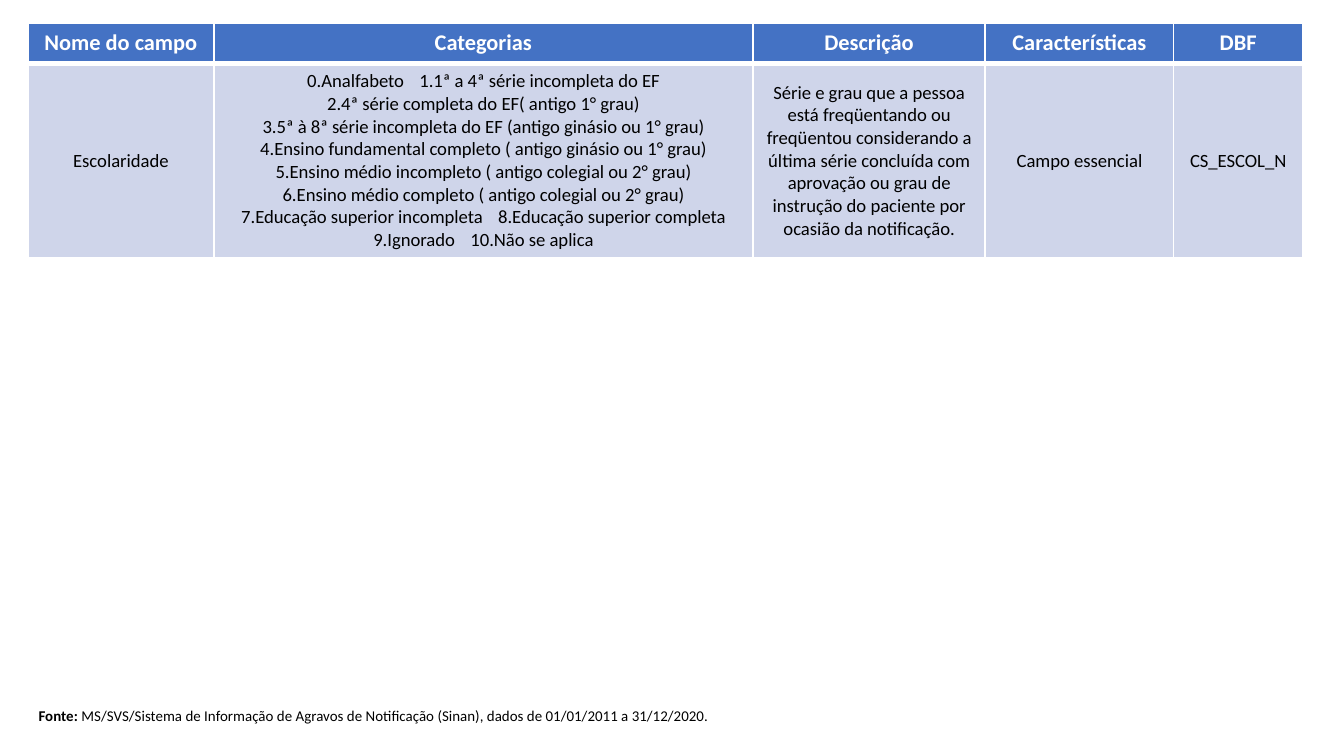
from lxml import etree
from pptx import Presentation
from pptx.dml.color import RGBColor
from pptx.enum.text import MSO_ANCHOR, MSO_AUTO_SIZE, PP_ALIGN
from pptx.oxml.ns import qn
from pptx.util import Cm, Pt

CENTER = PP_ALIGN.CENTER
MIDDLE = MSO_ANCHOR.MIDDLE
FIT_SHAPE = MSO_AUTO_SIZE.SHAPE_TO_FIT_TEXT

WHITE, BLACK = "FFFFFF", "000000"
HEADER_BLUE, BODY_BLUE = "4472C4", "CFD5EA"
THIN, THICK = 1, 3
WIDE_SPACE = 600  # extra width of the gap between entries, in 1/100 pt

COLUMN_WIDTHS = [3.51, 10.19, 4.39, 3.56, 2.44]
ROW_HEIGHTS = [0.74, 3.66]

HEADINGS = ["Nome do campo", "Categorias", "Descrição", "Características", "DBF"]

# One tuple for each line; entries sharing a line are set apart by a wide gap
CATEGORIES = [
    ("0.Analfabeto", "1.1ª a 4ª série incompleta do EF"),
    ("2.4ª série completa do EF( antigo 1° grau)",),
    ("3.5ª à 8ª série incompleta do EF (antigo ginásio ou 1° grau)",),
    ("4.Ensino fundamental completo ( antigo ginásio ou 1° grau)",),
    ("5.Ensino médio incompleto ( antigo colegial ou 2° grau)",),
    ("6.Ensino médio completo ( antigo colegial ou 2° grau)",),
    ("7.Educação superior incompleta", "8.Educação superior completa"),
    ("9.Ignorado", "10.Não se aplica"),
]
DESCRIPTION = (
    "Série e grau que a pessoa está freqüentando ou freqüentou considerando a "
    "última série concluída com aprovação ou grau de instrução do paciente por "
    "ocasião da notificação."
)
SCHOOLING = [
    [("Escolaridade",)],
    CATEGORIES,
    [(DESCRIPTION,)],
    [("Campo essencial",)],
    [("CS_ESCOL_N",)],
]


def color(hex_value):
    return RGBColor.from_string(hex_value)


class SlideBuilder:
    font_name = "Calibri"

    def __init__(self, slide):
        self.slide = slide

    def style(self, run, size, hex_value, bold=False):
        run.font.name = self.font_name
        run.font.size = Pt(size)
        run.font.bold = bold
        run.font.color.rgb = color(hex_value)

    def borders(self, cell, top, bottom):
        """Draw white cell borders; top and bottom are widths in points."""
        properties = cell._tc.get_or_add_tcPr()
        for side, width in (("L", THIN), ("R", THIN), ("T", top), ("B", bottom)):
            line = etree.SubElement(properties, qn(f"a:ln{side}"), w=str(Pt(width)))
            fill = etree.SubElement(line, qn("a:solidFill"))
            etree.SubElement(fill, qn("a:srgbClr"), val=WHITE)

    def fill_cell(self, cell, lines, fill, size, text_color, bold):
        cell.vertical_anchor = MIDDLE
        cell.fill.solid()
        cell.fill.fore_color.rgb = color(fill)
        frame = cell.text_frame
        frame.text = "\n".join(line[0] for line in lines)
        for paragraph, line in zip(frame.paragraphs, lines):
            paragraph.alignment = CENTER
            for entry in line[1:]:
                gap = paragraph.add_run()
                gap.text = " "
                gap._r.get_or_add_rPr().set("spc", str(WIDE_SPACE))
                paragraph.add_run().text = entry
            for run in paragraph.runs:
                self.style(run, size, text_color, bold)

    def table(self, left, top, widths, heights, headings, body):
        frame = self.slide.shapes.add_table(
            len(heights), len(widths), Cm(left), Cm(top),
            Cm(sum(widths)), Cm(sum(heights)))
        grid = frame.table
        for row, height in zip(grid.rows, heights):
            row.height = Cm(height)
        for index, width in enumerate(widths):
            grid.columns[index].width = Cm(width)
            heading, value = grid.cell(0, index), grid.cell(1, index)
            self.borders(heading, THIN, THICK)
            self.borders(value, THICK, THIN)
            self.fill_cell(heading, [(headings[index],)], HEADER_BLUE, 12, WHITE, True)
            self.fill_cell(value, body[index], BODY_BLUE, 10, BLACK, False)

    def source_note(self, left, top, width, height, label, text):
        box = self.slide.shapes.add_textbox(Cm(left), Cm(top), Cm(width), Cm(height))
        frame = box.text_frame
        frame.word_wrap = True
        frame.auto_size = FIT_SHAPE
        note = frame.paragraphs[0]
        note.text = label
        note.add_run().text = text
        for run, bold in zip(note.runs, (True, False)):
            self.style(run, 8, BLACK, bold)


def main():
    deck = Presentation()
    deck.slide_width, deck.slide_height = Cm(25.4), Cm(14.29)
    builder = SlideBuilder(deck.slides.add_slide(deck.slide_layouts[6]))
    builder.table(0.53, 0.43, COLUMN_WIDTHS, ROW_HEIGHTS, HEADINGS, SCHOOLING)
    builder.source_note(
        0.48, 13.23, 13.67, 0.6, "Fonte: ",
        "MS/SVS/Sistema de Informação de Agravos de Notificação (Sinan), "
        "dados de 01/01/2011 a 31/12/2020.")
    deck.save("out.pptx")


if __name__ == "__main__":
    main()
